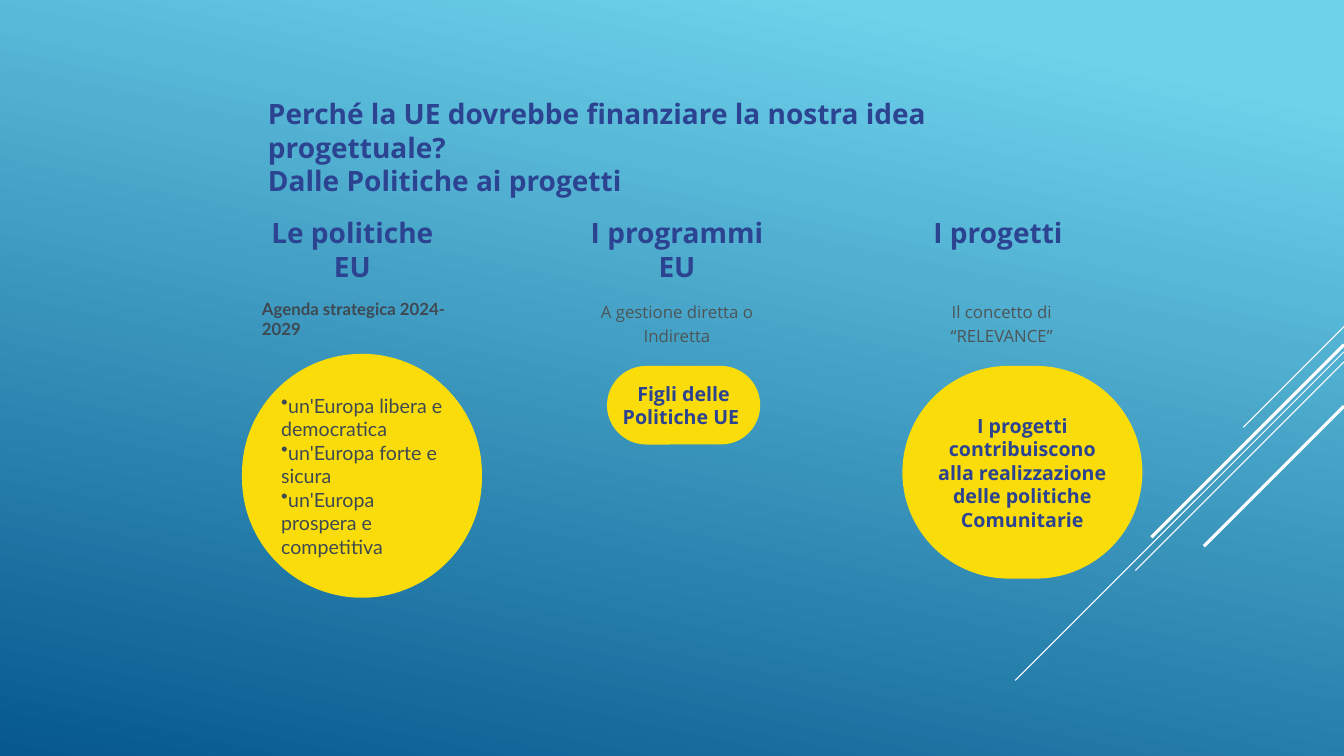
import pptx
import pptx.dml.color
import pptx.enum.shapes
import pptx.enum.text
import pptx.oxml.ns
import pptx.util
from lxml import etree

ALIGN = pptx.enum.text.PP_ALIGN
ANCHOR = pptx.enum.text.MSO_ANCHOR
INCH = pptx.util.Inches

# Palette and fonts
NAVY, SLATE, GREY = "2B4390", "3E4951", "4D5556"
YELLOW, WHITE = "F9DC0A", "FFFFFF"
SKY, OCEAN = "6ED2EB", "06588E"
SANS, LATO = "Open Sans", "Lato"

# Grid: three columns, and the rows shared by them
WIDTH, HEIGHT = 13.33, 7.5
COL_LEFT, COL_PITCH, COL_WIDTH = 2.56, 3.22, 1.87
TITLE_ROW, HEADING_ROW, CAPTION_ROW, BUBBLE_ROW = 0.91, 2.1, 2.91, 3.63


def color(hex_code):
    return pptx.dml.color.RGBColor.from_string(hex_code)


def col(index, offset=0.0):
    return COL_LEFT + index * COL_PITCH + offset


def paint_background(slide):
    fill = slide.background.fill
    fill.gradient()
    fill.gradient_angle = 360 - 102
    for stop, position, shade in zip(fill.gradient_stops, (0.1, 1), (SKY, OCEAN)):
        stop.position = position
        stop.color.rgb = color(shade)


def add_bullet(p):
    p_pr = p._p.get_or_add_pPr()
    p_pr.set("marL", "0")
    p_pr.set("indent", "0")
    bullet = etree.SubElement(p_pr, pptx.oxml.ns.qn("a:buChar"))
    bullet.set("char", "•")


def write(sp, lines, size, ink, font=SANS, bold=True, align=ALIGN.CENTER,
          inset=(0.04, 0.04), spacing=None, bullets=False, anchor=ANCHOR.TOP):
    tf = sp.text_frame
    tf.word_wrap = True
    tf.vertical_anchor = anchor
    tf.margin_left = tf.margin_right = INCH(inset[0])
    tf.margin_top = tf.margin_bottom = INCH(inset[1])
    for i, line in enumerate(lines):
        p = tf.add_paragraph() if i else tf.paragraphs[0]
        p.alignment = align
        if spacing:
            p.line_spacing = spacing
        if bullets:
            add_bullet(p)
        r = p.add_run()
        r.text = line
        r.font.name = font
        r.font.size = pptx.util.Pt(size)
        r.font.bold = bold
        r.font.color.rgb = color(ink)


def add_text(slide, x, y, w, h, lines, size, ink, **style):
    sp = slide.shapes.add_textbox(INCH(x), INCH(y), INCH(w), INCH(h))
    write(sp, lines, size, ink, **style)


def add_bubble(slide, x, y, w, h, lines, ink, **style):
    sp = slide.shapes.add_shape(pptx.enum.shapes.MSO_SHAPE.ROUNDED_RECTANGLE,
                                INCH(x), INCH(y), INCH(w), INCH(h))
    sp.adjustments[0] = 0.5
    sp.shadow.inherit = False
    sp.fill.solid()
    sp.fill.fore_color.rgb = color(YELLOW)
    sp.line.fill.background()
    write(sp, lines, 14, ink, anchor=ANCHOR.MIDDLE, **style)


def add_ray(slide, y, reach, weight):
    """A 45-degree line running down and left from the right edge."""
    ray = slide.shapes.add_connector(
        pptx.enum.shapes.MSO_CONNECTOR.STRAIGHT,
        INCH(WIDTH), INCH(y), INCH(WIDTH - reach), INCH(y + reach))
    ray.line.color.rgb = color(WHITE)
    ray.line.width = pptx.util.Pt(weight)
    etree.SubElement(ray._element.spPr, pptx.oxml.ns.qn("a:effectLst"))


def main():
    prs = pptx.Presentation()
    prs.slide_width, prs.slide_height = INCH(WIDTH), INCH(HEIGHT)
    slide = prs.slides.add_slide(prs.slide_layouts[6])
    paint_background(slide)

    # Decorative rays
    for y, reach, weight in ((3.24, 1, 0.75), (3.49, 3.26, 0.75), (3.59, 2.07, 0.75),
                             (3.42, 1.91, 2.25), (4.03, 1.39, 2.25)):
        add_ray(slide, y, reach, weight)

    # Title
    add_text(slide, col(0), TITLE_ROW, 8.4, 1.1,
             ["Perché la UE dovrebbe finanziare la nostra idea progettuale?",
              "Dalle Politiche ai progetti"],
             20, NAVY, align=ALIGN.LEFT, inset=(0.1, 0.05))

    # Column headings
    for i, heading in enumerate(("Le politiche EU", "I programmi EU", "I progetti ")):
        add_text(slide, col(i), HEADING_ROW, COL_WIDTH, 0.49, [heading], 20, NAVY)

    # Captions
    add_text(slide, col(0, -0.06), CAPTION_ROW, 2.35, 0.5, ["Agenda strategica 2024-2029"],
             12, SLATE, font=LATO, align=ALIGN.LEFT, inset=(0.1, 0.05))
    for i, caption in ((1, "A gestione diretta o Indiretta"),
                       (2, "Il concetto di “RELEVANCE”")):
        add_text(slide, col(i, -0.06), CAPTION_ROW, 1.99, 0.57, [caption],
                 12, GREY, bold=False, inset=(0.1, 0.05), spacing=1.17)

    # Yellow bubbles
    add_bubble(slide, col(0, -0.16), BUBBLE_ROW - 0.12, 2.38, 2.42,
               ["un'Europa libera e democratica", "un'Europa forte e sicura",
                "un'Europa prospera e competitiva"],
               SLATE, font=LATO, bold=False, align=ALIGN.LEFT, bullets=True)
    add_bubble(slide, col(1, 0.24), BUBBLE_ROW, 1.52, 0.78,
               ["Figli delle Politiche UE "], NAVY)
    add_bubble(slide, col(2, -0.05), BUBBLE_ROW, 2.38, 2.11,
               ["I progetti contribuiscono alla realizzazione delle politiche Comunitarie"],
               NAVY)

    prs.save("out.pptx")


if __name__ == "__main__":
    main()
